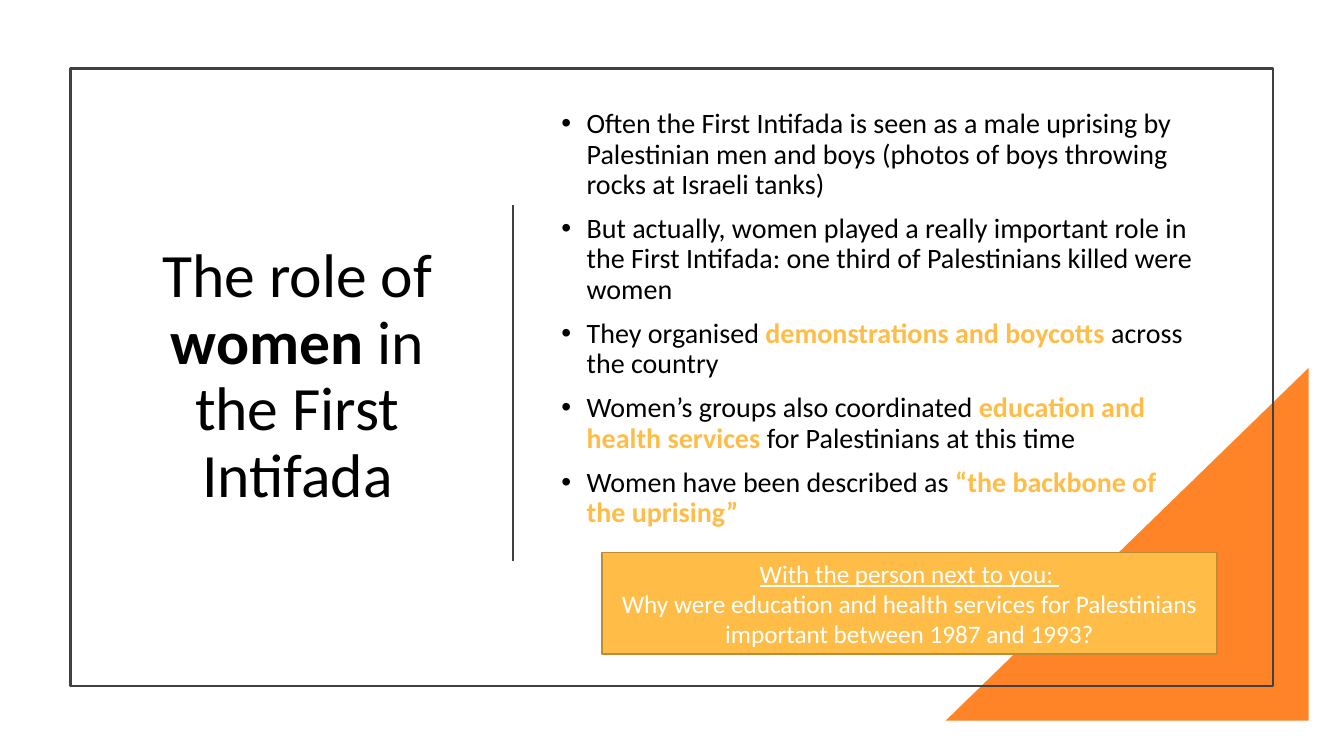
from lxml.etree import SubElement
from pptx import Presentation
from pptx.dml.color import RGBColor
from pptx.enum.shapes import MSO_CONNECTOR, MSO_SHAPE
from pptx.enum.text import MSO_ANCHOR, MSO_AUTO_SIZE, PP_ALIGN
from pptx.oxml.ns import qn
from pptx.util import Inches, Pt

COLOURS = {
    "text": "000000",
    "rule": "404040",
    "triangle": "FF8427",
    "accent": "FFBD47",
    "accent_edge": "BD8C35",
    "light": "FFFFFF",
}

TITLE = [("The role of ", {}), ("women", {"bold": True}), (" in the First Intifada", {})]

KEY = {"bold": True, "colour": "accent"}
POINTS = [
    [("Often the First Intifada is seen as a male uprising by Palestinian men and boys "
      "(photos of boys throwing rocks at Israeli tanks)", {})],
    [("But actually, women played a really important role in the First Intifada: "
      "one third of Palestinians killed were women", {})],
    [("They organised ", {}), ("demonstrations and boycotts ", KEY), ("across the country", {})],
    [("Women’s groups also coordinated ", {}), ("education and health services", KEY),
     (" for Palestinians at this time", {})],
    [("Women have been described as", {}), (" “the backbone of the uprising”", KEY)],
]

TASK = [
    [("With the person next to you: ", {"underline": True})],
    [("Why were education and health services for Palestinians "
      "important between 1987 and 1993?", {})],
]


class SlideBuilder:
    def __init__(self, slide, font="Calibri"):
        self.slide = slide
        self.font = font

    def colour(self, name):
        return RGBColor.from_string(COLOURS[name])

    def fill_text(self, text_frame, paragraphs, size, colour="text", bullets=False, **layout):
        """Fill a frame with lists of (text, format) runs; layout holds paragraph attributes."""
        text_frame.word_wrap = True
        text_frame.auto_size = MSO_AUTO_SIZE.NONE
        text_frame.vertical_anchor = MSO_ANCHOR.MIDDLE
        for index, runs in enumerate(paragraphs):
            paragraph = text_frame.add_paragraph() if index else text_frame.paragraphs[0]
            for name, value in layout.items():
                setattr(paragraph, name, value)
            if bullets:
                self.add_bullet(paragraph)
            for text, changes in runs:
                run = paragraph.add_run()
                run.text = text
                values = {"name": self.font, "size": Pt(size), "bold": False, **changes}
                run.font.color.rgb = self.colour(values.pop("colour", colour))
                for name, value in values.items():
                    setattr(run.font, name, value)

    def add_bullet(self, paragraph):
        properties = paragraph._p.get_or_add_pPr()
        properties.set("marL", str(Inches(0.25)))
        properties.set("indent", str(-Inches(0.25)))
        SubElement(properties, qn("a:buFont")).set("typeface", "Arial")
        SubElement(properties, qn("a:buChar")).set("char", "•")

    def title(self, runs, left, top, width, height):
        title = self.slide.shapes.title
        position = {"left": left, "top": top, "width": width, "height": height}
        for name, value in position.items():
            setattr(title, name, Inches(value))
        self.fill_text(title.text_frame, [runs], 44, alignment=PP_ALIGN.CENTER, line_spacing=0.9)

    def shape(self, kind, box, fill=None, line=None, line_width=1):
        shape = self.slide.shapes.add_shape(kind, *map(Inches, box))
        shape.shadow.inherit = False
        if fill:
            shape.fill.solid()
            shape.fill.fore_color.rgb = self.colour(fill)
        else:
            shape.fill.background()
        if line:
            shape.line.color.rgb = self.colour(line)
            shape.line.width = Pt(line_width)
        else:
            shape.line.fill.background()
        return shape

    def vertical_rule(self, x, top, bottom):
        ends = map(Inches, (x, top, x, bottom))
        rule = self.slide.shapes.add_connector(MSO_CONNECTOR.STRAIGHT, *ends)
        rule.line.color.rgb = self.colour("rule")
        rule.line.width = Pt(1.5)
        SubElement(rule._element.spPr, qn("a:effectLst"))

    def bullet_list(self, points, *box):
        text_box = self.slide.shapes.add_textbox(*map(Inches, box))
        self.fill_text(text_box.text_frame, points, 20, bullets=True,
                       line_spacing=0.9, space_before=Pt(10))


def main():
    presentation = Presentation()
    presentation.slide_width = Inches(13.33)
    presentation.slide_height = Inches(7.5)
    title_only = presentation.slide_layouts[5]
    builder = SlideBuilder(presentation.slides.add_slide(title_only))

    triangle = builder.shape(MSO_SHAPE.RIGHT_TRIANGLE, (9.38, 3.65, 3.6, 3.5), fill="triangle")
    triangle._element.spPr.xfrm.set("flipH", "1")
    builder.shape(MSO_SHAPE.RECTANGLE, (0.7, 0.68, 11.93, 6.13), line="rule", line_width=1.5)
    builder.title(TITLE, 1.23, 2.27, 3.44, 2.95)
    builder.vertical_rule(5.09, 2.03, 5.57)
    builder.bullet_list(POINTS, 5.47, 1.22, 6.49, 3.89)
    task_box = builder.shape(MSO_SHAPE.RECTANGLE, (5.97, 5.48, 6.1, 1.01),
                             fill="accent", line="accent_edge")
    builder.fill_text(task_box.text_frame, TASK, 18, colour="light", alignment=PP_ALIGN.CENTER)

    presentation.save("out.pptx")


if __name__ == "__main__":
    main()
